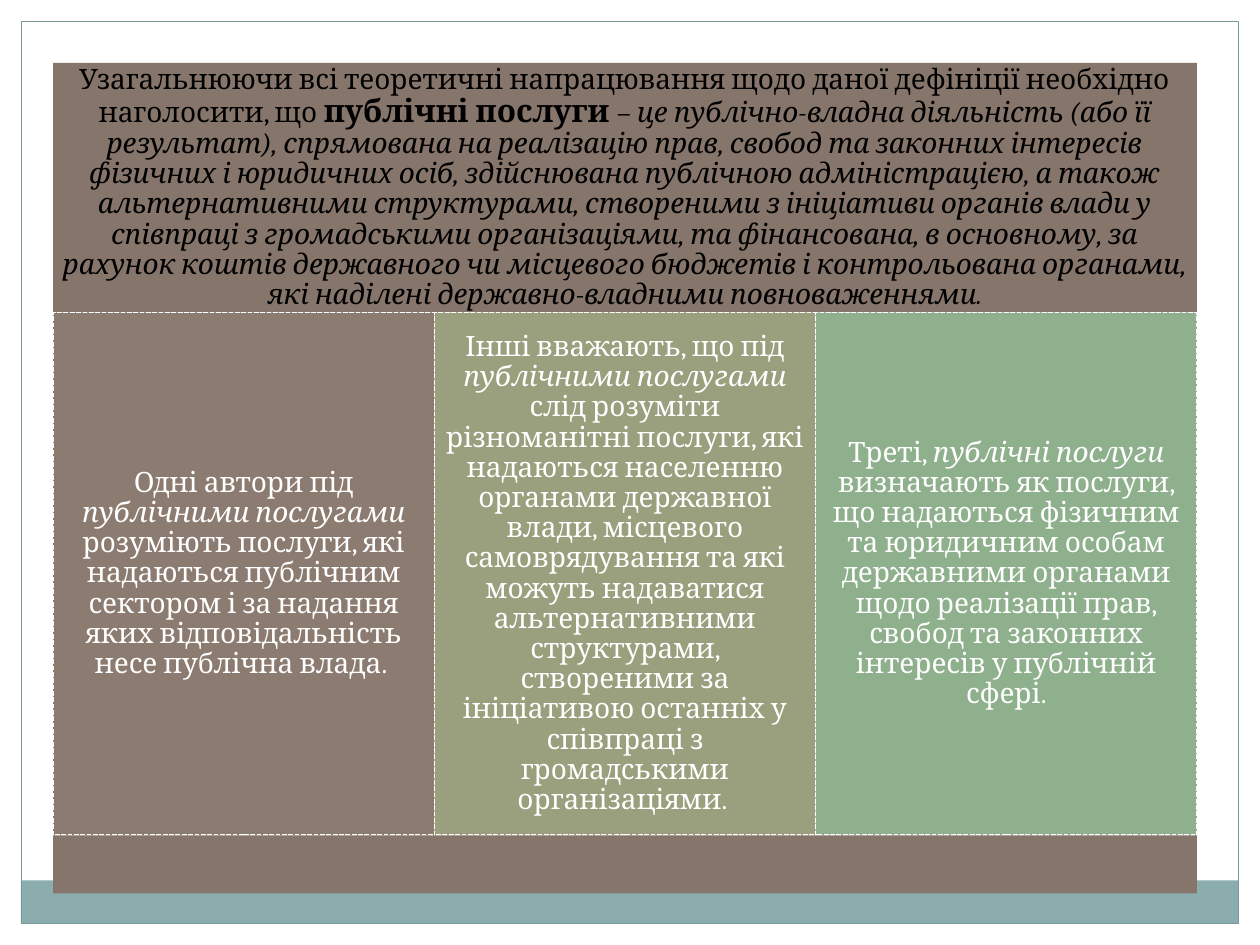
from pptx import Presentation, util as u
from pptx.dml.color import RGBColor
from pptx.enum import dml, shapes, text

WHITE = RGBColor(0xFF, 0xFF, 0xFF)
BLACK = RGBColor(0x00, 0x00, 0x00)
TEAL = RGBColor(0x8C, 0xAD, 0xAE)
FRAME = RGBColor(0x7C, 0x99, 0x9A)
BROWN = RGBColor(0x86, 0x75, 0x6B)
TAUPE = RGBColor(0x8C, 0x7B, 0x70)
OLIVE = RGBColor(0x9A, 0x9F, 0x7D)
GREEN = RGBColor(0x8F, 0xB0, 0x8C)


class Slide:
    """Holds the style and the current page; lengths are in centimetres."""
    font = "Cambria"
    size = 16
    inset = 0.18

    def __init__(self, deck):
        self.page = deck.slides.add_slide(deck.slide_layouts[6])

    def box(self, left, top, width, height, fill=None, line=None, weight=0.75, dash=None):
        box = self.page.shapes.add_shape(
            shapes.MSO_SHAPE.RECTANGLE, u.Cm(left), u.Cm(top), u.Cm(width), u.Cm(height))
        box.shadow.inherit = False
        if fill is None:
            box.fill.background()
        else:
            box.fill.solid()
            box.fill.fore_color.rgb = fill
        if line is None:
            box.line.fill.background()
        else:
            box.line.color.rgb = line
            box.line.width = u.Pt(weight)
            if dash is not None:
                box.line.dash_style = dash
        return box

    def label(self, box, color, spans):
        """Each span is (words, style); the style letters are b, i or none."""
        frame = box.text_frame
        frame.word_wrap = True
        frame.vertical_anchor = text.MSO_ANCHOR.MIDDLE
        frame.margin_left = frame.margin_right = u.Cm(self.inset)
        frame.margin_top = frame.margin_bottom = u.Cm(self.inset)
        para = frame.paragraphs[0]
        para.alignment = text.PP_ALIGN.CENTER
        para.line_spacing = 0.9
        para.space_after = u.Pt(5.6)
        for words, style in spans:
            span = para.add_run()
            span.text = words
            span.font.name = self.font
            span.font.size = u.Pt(self.size + 2 if style == "b" else self.size)
            span.font.bold = style == "b"
            span.font.italic = style == "i"
            span.font.color.rgb = color


HEADER = [
    ("Узагальнюючи всі теоретичні напрацювання щодо даної дефініції необхідно "
     "наголосити, що ", ""),
    ("публічні послуги ", "b"),
    ("– ", ""),
    ("це публічно-владна діяльність (або її результат), спрямована на реалізацію прав, "
     "свобод та законних інтересів фізичних і юридичних осіб, здійснювана публічною "
     "адміністрацією, а також альтернативними структурами, створеними з ініціативи "
     "органів влади у співпраці з громадськими організаціями, та фінансована, в "
     "основному, за рахунок коштів державного чи місцевого бюджетів і контрольована "
     "органами, які наділені державно-владними повноваженнями.", "i"),
]
COLUMNS = [
    (TAUPE, [
        ("Одні автори під ", ""),
        ("публічними послугами", "i"),
        (" розуміють послуги, які надаються публічним сектором і за надання яких "
         "відповідальність несе публічна влада. ", "")]),
    (OLIVE, [
        ("Інші вважають, що під ", ""),
        ("публічними послугами", "i"),
        (" слід розуміти різноманітні послуги, які надаються населенню органами "
         "державної влади, місцевого самоврядування та які можуть надаватися "
         "альтернативними структурами, створеними за ініціативою останніх у співпраці "
         "з громадськими організаціями. ", "")]),
    (GREEN, [
        ("Треті, ", ""),
        ("публічні послуги", "i"),
        (" визначають як послуги, що надаються фізичним та юридичним особам державними "
         "органами щодо реалізації прав, свобод та законних інтересів у публічній "
         "сфері.", "")]),
]


def main():
    deck = Presentation()
    deck.slide_width, deck.slide_height = u.Cm(25.4), u.Cm(19.05)
    slide = Slide(deck)

    # Page frame with the bottom band
    slide.box(0.42, 17.75, 24.54, 0.86, TEAL)
    slide.box(0.43, 0.43, 24.54, 18.19, line=FRAME)

    # Definition across the top
    left, top, width, header_height = 1.07, 1.27, 23.06, 5.03
    header = slide.box(left, top, width, header_height, BROWN)
    slide.label(header, BLACK, HEADER)

    # Three equal columns of views
    column_top, column_height = top + header_height, 10.54
    column_width = width / len(COLUMNS)
    for index, (fill, spans) in enumerate(COLUMNS):
        column = slide.box(left + index * column_width, column_top, column_width,
                           column_height, fill, WHITE, 0.9, dml.MSO_LINE.SQUARE_DOT)
        slide.label(column, WHITE, spans)

    # Closing strip
    slide.box(left, column_top + column_height, width, 1.17, BROWN)

    deck.save("out.pptx")


if __name__ == "__main__":
    main()
